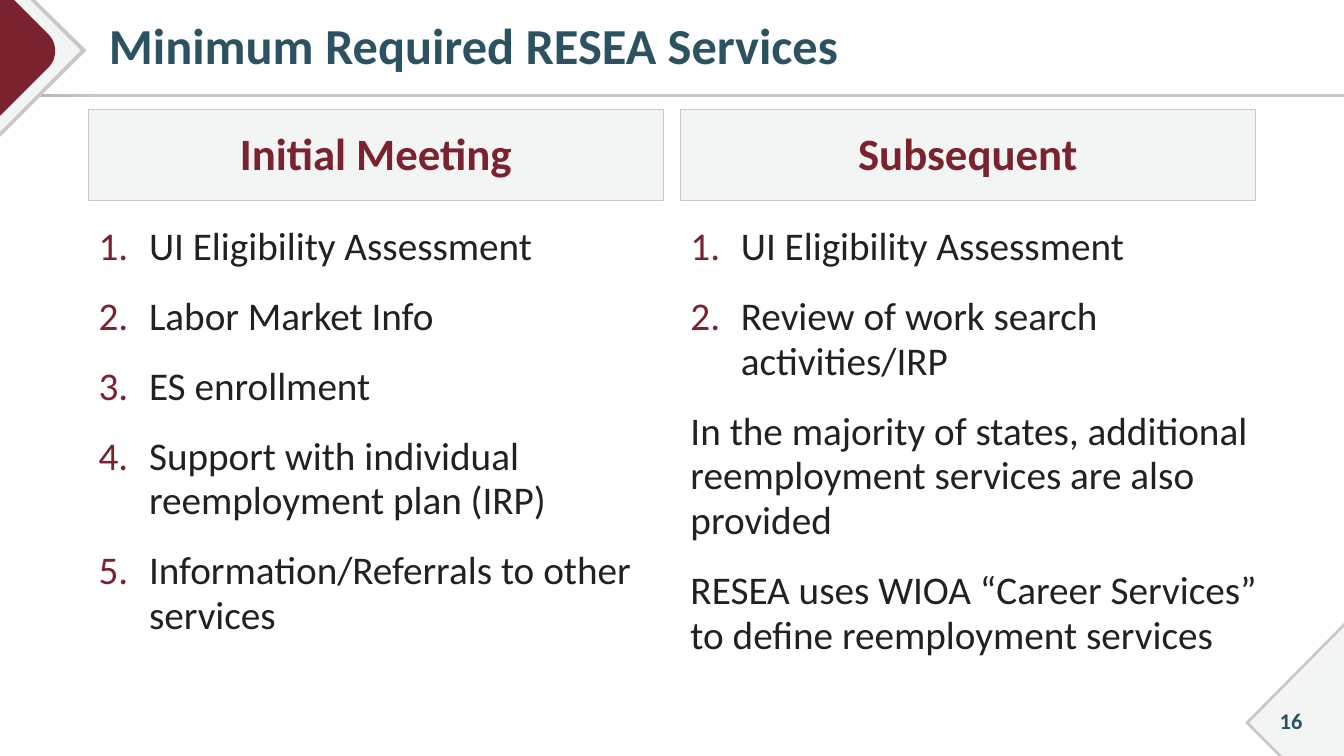
"""Build the slide on the minimum required RESEA services."""
from lxml.etree import SubElement
from pptx import Presentation
from pptx.dml.color import RGBColor
from pptx.enum.shapes import MSO_SHAPE
from pptx.enum.text import MSO_ANCHOR, PP_ALIGN
from pptx.oxml.ns import qn
from pptx.util import Inches, Pt

WHITE = RGBColor(0xFF, 0xFF, 0xFF)
PALE = RGBColor(0xF3, 0xF4, 0xF4)
GREY = RGBColor(0xC8, 0xC8, 0xC6)
DARK = RGBColor(0xAB, 0xAB, 0xA8)
WINE = RGBColor(0x7A, 0x23, 0x2F)
TEAL = RGBColor(0x2C, 0x52, 0x61)
INK = RGBColor(0x24, 0x20, 0x21)

WIDE, HIGH = 13.33, 7.5
LEFT, STEP, COL = 0.88, 5.87, 5.7

deck = Presentation()
deck.slide_width, deck.slide_height = Inches(WIDE), Inches(HIGH)
slide = deck.slides.add_slide(deck.slide_layouts[6])
slide.background.fill.solid()
slide.background.fill.fore_color.rgb = WHITE
shapes = slide.shapes


def box(x, y, w, h, anchor=MSO_ANCHOR.TOP, shape=None):
    """Add a text box or a preset shape."""
    area = [Inches(n) for n in (x, y, w, h)]
    item = shapes.add_shape(shape, *area) if shape else shapes.add_textbox(*area)
    if shape:
        item.shadow.inherit = False
    item.text_frame.word_wrap = True
    item.text_frame.vertical_anchor = anchor
    return item


def write(para, text, size, color, bold=False, lines=0.95):
    """Add one styled run to a paragraph."""
    para.line_spacing = lines
    run = para.add_run()
    run.text = text
    run.font.name, run.font.size, run.font.bold = "Calibri", Pt(size), bold
    run.font.color.rgb = color


rule = box(0, 0.93, WIDE, 0.03, shape=MSO_SHAPE.RECTANGLE)
rule.line.fill.background()
rule.fill.gradient()
rule.fill.gradient_angle = 0
for stop, color, place in zip(rule.fill.gradient_stops, (DARK, GREY), (0, 0.08)):
    stop.color.rgb, stop.position = color, place

curve = [(0.48, 0.34), (0.57, 0.43), (0.57, 0.58), (0.48, 0.67)]
bend = []
for i in range(13):
    t = i / 12
    parts = ((1 - t) ** 3, 3 * t * (1 - t) ** 2, 3 * t * t * (1 - t), t ** 3)
    bend.append(tuple(sum(k * p[axis] for k, p in zip(parts, curve)) for axis in (0, 1)))

corners = [
    (GREY, [(0, 0), (0.35, 0), (0.86, 0.5), (0, 1.36)]),
    (PALE, [(0, 0), (0.3, 0), (0.8, 0.5), (0, 1.31)]),
    (WINE, [(0, 0), (0.14, 0), *bend, (0, 1.15)]),
    (GREY, [(WIDE, 6.18), (WIDE, HIGH), (12.68, HIGH), (12.35, 7.17)]),
    (PALE, [(WIDE, 6.22), (WIDE, HIGH), (12.72, HIGH), (12.39, 7.17)]),
]
for color, points in corners:
    dots = [(Inches(x), Inches(y)) for x, y in points]
    pen = shapes.build_freeform(*dots[0])
    pen.add_line_segments(dots[1:], close=True)
    form = pen.convert_to_shape()
    form.shadow.inherit = False
    form.fill.solid()
    form.fill.fore_color.rgb = color
    form.line.fill.background()

page = box(12.45, 6.95, 0.71, 0.4, MSO_ANCHOR.MIDDLE).text_frame.paragraphs[0]
page.alignment = PP_ALIGN.CENTER
write(page, "16", 16, TEAL, True, 1.0)

title = box(LEFT, 0.05, 12.12, 0.86, MSO_ANCHOR.MIDDLE).text_frame
title.margin_left = Inches(0.2)
write(title.paragraphs[0], "Minimum Required RESEA Services", 36, TEAL, True, 0.9)

columns = [
    ("Initial Meeting", COL, [
        "UI Eligibility Assessment",
        "Labor Market Info",
        "ES enrollment",
        "Support with individual reemployment plan (IRP)",
        "Information/Referrals to other services",
    ], []),
    ("Subsequent", 6.09, [
        "UI Eligibility Assessment",
        "Review of work search activities/IRP",
    ], [
        "In the majority of states, additional reemployment services are also provided",
        "RESEA uses WIOA “Career Services” to define reemployment services",
    ]),
]
for col, (name, width, steps, notes) in enumerate(columns):
    x = LEFT + col * STEP
    head = box(x, 1.09, COL, 0.9, MSO_ANCHOR.MIDDLE, MSO_SHAPE.RECTANGLE)
    head.fill.solid()
    head.fill.fore_color.rgb = PALE
    head.line.color.rgb, head.line.width = GREY, Pt(0.75)
    para = head.text_frame.paragraphs[0]
    para.alignment = PP_ALIGN.CENTER
    write(para, name, 32, WINE, True)

    body = box(x, 2.18, width, 4.59).text_frame
    for row, text in enumerate(steps + notes):
        para = body.add_paragraph() if row else body.paragraphs[0]
        if row < len(steps):
            props = para._p.get_or_add_pPr()
            props.set("marL", str(Inches(0.5)))
            props.set("indent", str(-Inches(0.5)))
            tint = SubElement(props, qn("a:buClr"))
            SubElement(tint, qn("a:srgbClr"), val=str(WINE))
            SubElement(props, qn("a:buFont"), typeface="+mj-lt")
            SubElement(props, qn("a:buAutoNum"), type="arabicPeriod")
        if row:
            para.space_before = Pt(18)
        write(para, text, 28, INK)

deck.save("out.pptx")
